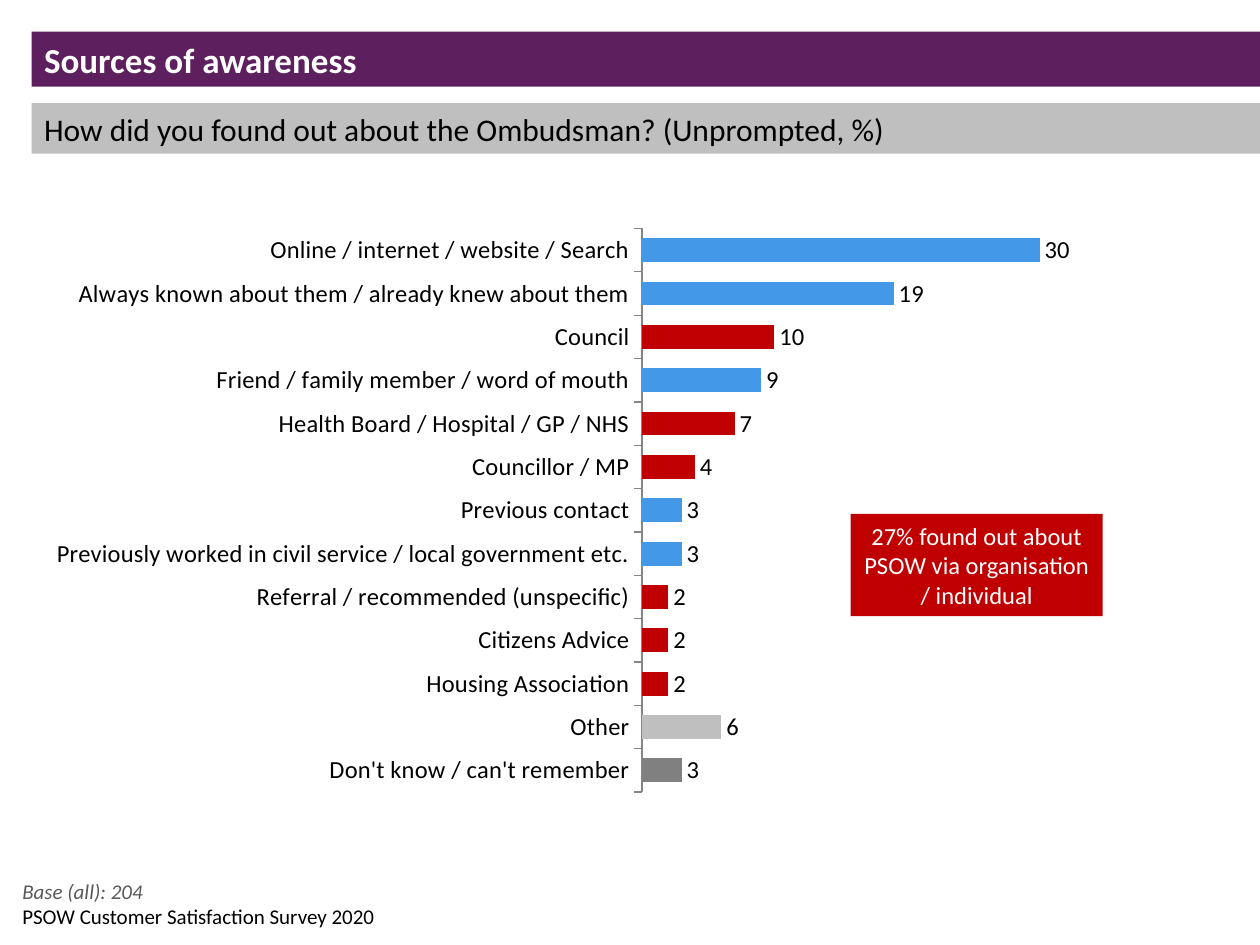
from pptx import Presentation
from pptx.chart.data import CategoryChartData
from pptx.dml.color import RGBColor
from pptx.enum.chart import XL_CHART_TYPE, XL_LABEL_POSITION, XL_TICK_MARK
from pptx.enum.shapes import MSO_SHAPE
from pptx.enum.text import MSO_ANCHOR, PP_ALIGN
from pptx.oxml import parse_xml
from pptx.oxml.ns import nsdecls, qn
from pptx.util import Cm, Pt

BAR_CLUSTERED = XL_CHART_TYPE.BAR_CLUSTERED
OUTSIDE_END = XL_LABEL_POSITION.OUTSIDE_END
TICK_OUTSIDE, TICK_NONE = XL_TICK_MARK.OUTSIDE, XL_TICK_MARK.NONE
RECTANGLE = MSO_SHAPE.RECTANGLE
MIDDLE = MSO_ANCHOR.MIDDLE
LEFT, CENTER = PP_ALIGN.LEFT, PP_ALIGN.CENTER

FONT = "Calibri"
COLORS = {
    "title": "5D1F5E", "question": "BFBFBF", "white": "FFFFFF", "black": "000000",
    "base": "595959", "axis": "868686",
    "direct": "4399E7", "referred": "C00000", "other": "BFBFBF", "unknown": "808080",
}

SOURCES = [
    ("Online / internet / website / Search", 30, "direct"),
    ("Always known about them / already knew about them", 19, "direct"),
    ("Council", 10, "referred"),
    ("Friend / family member / word of mouth", 9, "direct"),
    ("Health Board / Hospital / GP / NHS", 7, "referred"),
    ("Councillor / MP", 4, "referred"),
    ("Previous contact", 3, "direct"),
    ("Previously worked in civil service / local government etc.", 3, "direct"),
    ("Referral / recommended (unspecific)", 2, "referred"),
    ("Citizens Advice", 2, "referred"),
    ("Housing Association", 2, "referred"),
    ("Other", 6, "other"),
    ("Don't know / can't remember", 3, "unknown"),
]

TEXTS = [
    ("Sources of awareness", (0.64, 0.64, 24.76, 1.11),
     dict(size=20, color="white", fill="title", bold=True)),
    ("How did you found out about the Ombudsman? (Unprompted, %)",
     (0.64, 2.08, 24.76, 1.02), dict(size=18, fill="question")),
    ("Base (all): 204", (0.2, 17.58, 18.42, 0.77),
     dict(size=12, color="base", italic=True)),
    ("PSOW Customer Satisfaction Survey 2020", (0.2, 18.08, 13.34, 0.77),
     dict(size=12)),
    ("27% found out about PSOW via organisation / individual",
     (17.15, 10.36, 5.08, 2.06),
     dict(size=14, color="white", fill="referred", align=CENTER)),
]

CHART_BOX = (0.64, 4.24, 23.93, 12.27)
PLOT_AREA = {"x": 0.514, "y": 0.03, "w": 0.391, "h": 0.926}


def rgb(name):
    return RGBColor.from_string(COLORS[name])


def add_text(slide, text, box, size, color="black", fill=None, bold=False,
             italic=False, align=LEFT):
    place = [Cm(length) for length in box]
    if fill:
        holder = slide.shapes.add_shape(RECTANGLE, *place)
        holder.shadow.inherit = False
        holder.fill.solid()
        holder.fill.fore_color.rgb = rgb(fill)
        holder.line.fill.background()
    else:
        holder = slide.shapes.add_textbox(*place)
    frame = holder.text_frame
    frame.word_wrap = True
    frame.vertical_anchor = MIDDLE
    paragraph = frame.paragraphs[0]
    paragraph.alignment = align
    run = paragraph.add_run()
    run.text = text
    font = run.font
    font.name, font.size, font.bold, font.italic = FONT, Pt(size), bold, italic
    font.color.rgb = rgb(color)


def place_plot(chart):
    plot_area = chart._chartSpace.chart.plotArea
    for layout in plot_area.findall(qn("c:layout")):
        plot_area.remove(layout)
    modes = "".join(f'<c:{side}Mode val="edge"/>' for side in "xy")
    sizes = "".join(f'<c:{side} val="{part}"/>' for side, part in PLOT_AREA.items())
    plot_area.insert(0, parse_xml(
        f'<c:layout {nsdecls("c")}><c:manualLayout><c:layoutTarget val="inner"/>'
        f"{modes}{sizes}</c:manualLayout></c:layout>"))


def add_sources_chart(slide):
    data = CategoryChartData()
    data.categories = [source for source, _, _ in SOURCES]
    data.add_series("Series 1", [percent for _, percent, _ in SOURCES])
    place = [Cm(length) for length in CHART_BOX]
    chart = slide.shapes.add_chart(BAR_CLUSTERED, *place, data).chart
    chart.has_legend = chart.has_title = False
    chart.font.name, chart.font.size = FONT, Pt(14)
    chart.font.color.rgb = rgb("black")
    place_plot(chart)

    sources_axis = chart.category_axis
    sources_axis.reverse_order = True
    sources_axis.major_tick_mark = TICK_OUTSIDE
    sources_axis.minor_tick_mark = TICK_NONE
    sources_axis.format.line.color.rgb = rgb("axis")
    percent_axis = chart.value_axis
    percent_axis.visible = percent_axis.has_major_gridlines = False
    percent_axis.minimum_scale, percent_axis.maximum_scale = 0, 35

    plot = chart.plots[0]
    plot.vary_by_categories = False
    plot.gap_width = 82
    plot.has_data_labels = True
    plot.data_labels.show_value = True
    plot.data_labels.position = OUTSIDE_END
    bars = plot.series[0]
    bars.format.fill.solid()
    bars.format.fill.fore_color.rgb = rgb("direct")
    for index, (_, _, group) in enumerate(SOURCES):
        if group != "direct":
            bar_fill = bars.points[index].format.fill
            bar_fill.solid()
            bar_fill.fore_color.rgb = rgb(group)


def main():
    deck = Presentation()
    deck.slide_width, deck.slide_height = Cm(25.4), Cm(19.05)
    slide = deck.slides.add_slide(deck.slide_layouts[6])
    add_sources_chart(slide)
    for text, box, style in TEXTS:
        add_text(slide, text, box, **style)
    deck.save("out.pptx")


if __name__ == "__main__":
    main()
